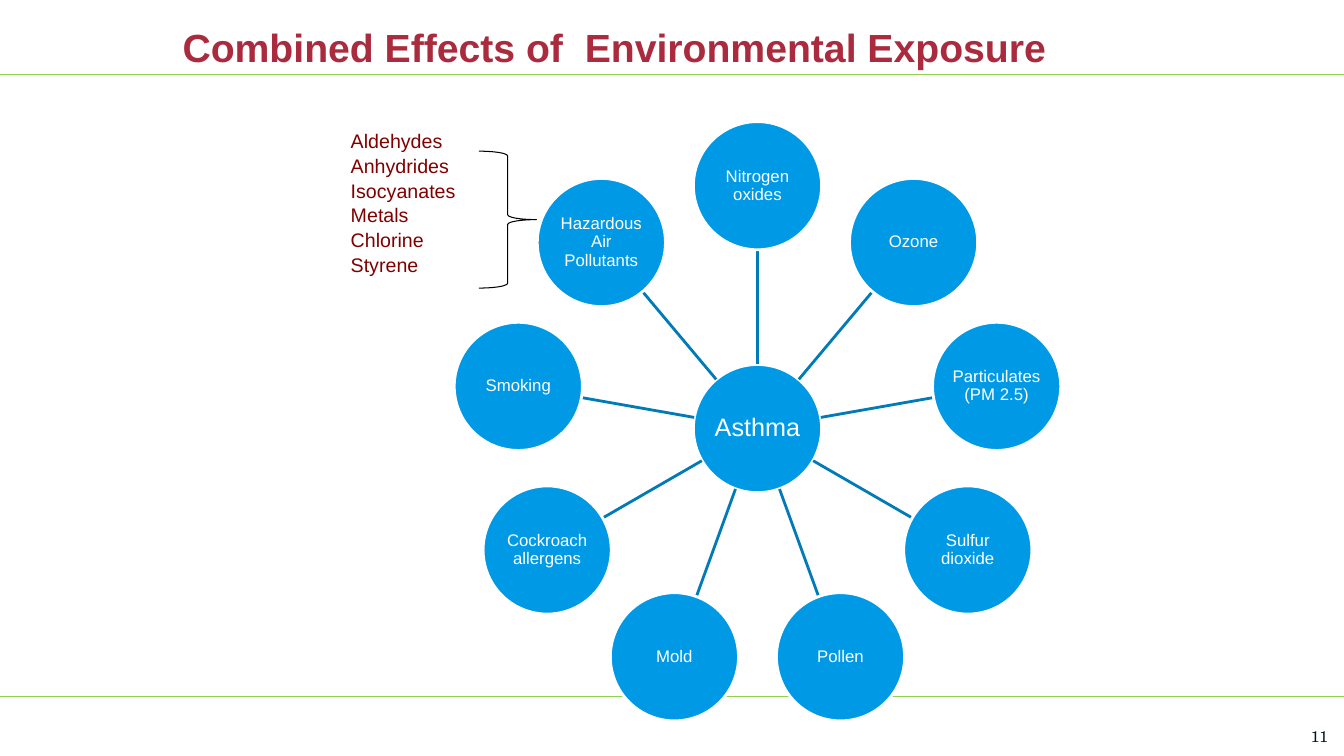
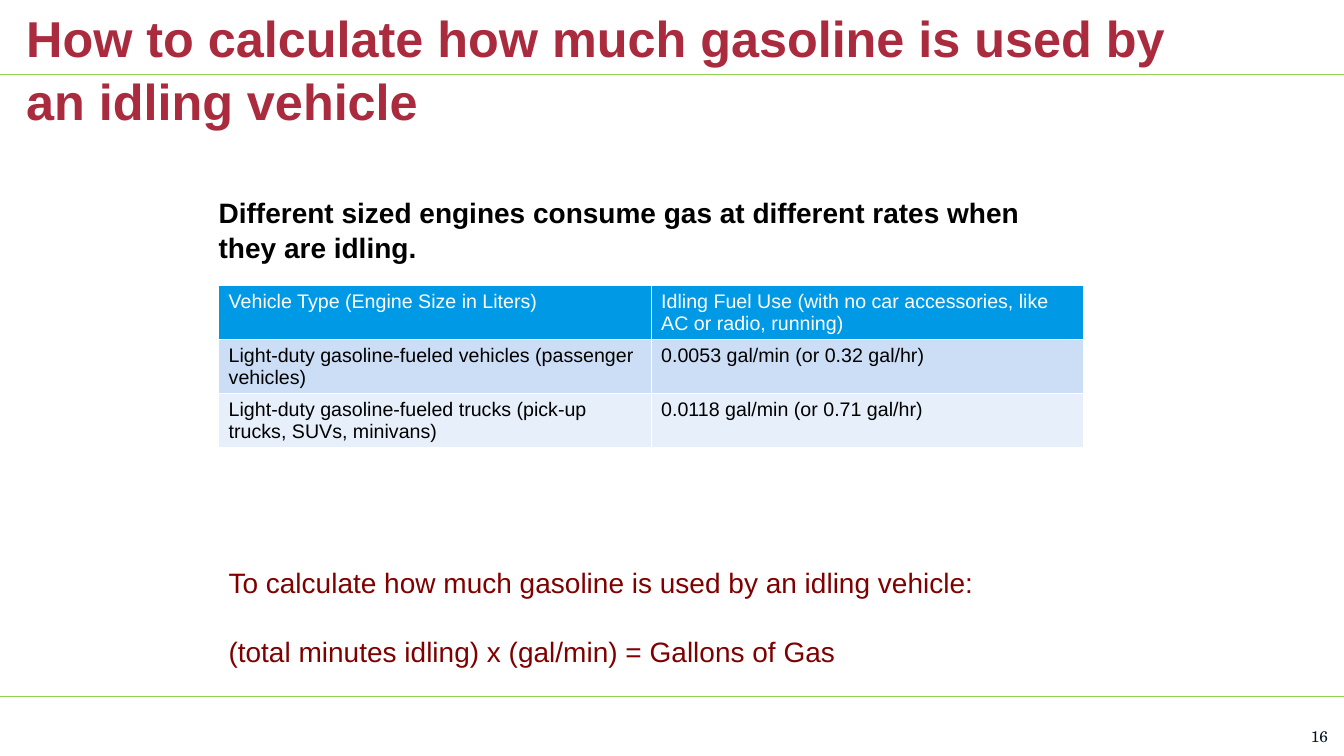
"""Build two slides on asthma exposures and the fuel used by idling vehicles."""
from math import cos, radians, sin

from pptx import Presentation
from pptx.dml.color import RGBColor
from pptx.enum.shapes import MSO_CONNECTOR, MSO_SHAPE
from pptx.enum.text import MSO_ANCHOR, MSO_AUTO_SIZE, PP_ALIGN
from pptx.oxml.ns import qn
from pptx.util import Cm, Pt
from lxml.etree import SubElement

WHITE = RGBColor(0xFF, 0xFF, 0xFF)
BLACK = RGBColor(0, 0, 0)
INK = RGBColor(0x06, 0x13, 0x23)
CRIMSON = RGBColor(0xAA, 0x2B, 0x3E)
MAROON = RGBColor(0x80, 0, 0)
GREEN = RGBColor(0x92, 0xD0, 0x50)
BLUE = RGBColor(0, 0x99, 0xE6)
SPOKE_BLUE = RGBColor(0, 0x7B, 0xB8)
ROW_FILLS = [BLUE, RGBColor(0xCC, 0xDE, 0xF5), RGBColor(0xE7, 0xEF, 0xFA)]

SLIDE_WIDTH, SLIDE_HEIGHT = 33.87, 19.05
RULE_TOPS = [1.88, 17.55]
LINE_SPACING = 1.05

EXPOSURE = {
    "title": "Combined Effects of  Environmental Exposure",
    "title_box": (4.6, -2.67, 22.86, 4.45),
    "title_size": 28,
    "number": "11",
}
IDLING = {
    "title": "How to calculate how much gasoline is used by an idling vehicle",
    "title_box": (0.66, 0.13, 28.96, 3.17),
    "title_size": 36,
    "number": "16",
}
HUB = "Asthma"
TRIGGERS = [
    "Nitrogen oxides", "Ozone", "Particulates (PM 2.5)", "Sulfur dioxide", "Pollen",
    "Mold", "Cockroach allergens", "Smoking", "Hazardous Air Pollutants",
]
POLLUTANTS = ["Aldehydes", "Anhydrides", "Isocyanates", "Metals", "Chlorine", "Styrene"]
ENGINE_NOTE = "Different sized engines consume gas at different rates when they are idling."
FUEL_ROWS = [
    ("Vehicle Type (Engine Size in Liters)",
     "Idling Fuel Use (with no car accessories, like AC or radio, running)"),
    ("Light-duty gasoline-fueled vehicles (passenger vehicles)",
     "0.0053 gal/min (or 0.32 gal/hr)"),
    ("Light-duty gasoline-fueled trucks (pick-up trucks, SUVs, minivans)",
     "0.0118 gal/min (or 0.71 gal/hr)"),
]
FORMULA = [
    "To calculate how much gasoline is used by an idling vehicle:",
    "(total minutes idling) x (gal/min) = Gallons of Gas",
]

HUB_X, HUB_Y = 19.09, 10.8
WHEEL_RADIUS = 6.12
CIRCLE_SIZE = 3.23
SPOKE_START, SPOKE_END = 1.62, 4.52


def place(shape, box):
    for name, value in zip(("left", "top", "width", "height"), box):
        setattr(shape, name, Cm(value))


def set_frame(frame, margins=(0, 0, 0, 0), anchor=MSO_ANCHOR.TOP, wrap=True):
    frame.auto_size = MSO_AUTO_SIZE.NONE
    frame.word_wrap = wrap
    frame.vertical_anchor = anchor
    for side, margin in zip(("left", "top", "right", "bottom"), margins):
        setattr(frame, f"margin_{side}", Cm(margin))


def write(frame, lines, size, color, bold=False, name="Arial",
          align=PP_ALIGN.LEFT, spacing=LINE_SPACING, gap=0):
    font_format = {"size": Pt(size), "bold": bold, "name": name}
    for index, line in enumerate(lines):
        paragraph = frame.add_paragraph() if index else frame.paragraphs[0]
        paragraph.text = line
        paragraph_format = {"alignment": align, "line_spacing": spacing,
                            "space_before": Pt(gap if index else 0), "space_after": Pt(0)}
        for key, value in paragraph_format.items():
            setattr(paragraph, key, value)
        for key, value in font_format.items():
            setattr(paragraph.font, key, value)
        paragraph.font.color.rgb = color


def add_text(slide, box, lines, size, color, **text_format):
    shape = slide.shapes.add_textbox(*map(Cm, box))
    set_frame(shape.text_frame, (0.25, 0.13, 0.25, 0.13))
    write(shape.text_frame, lines, size, color, **text_format)


def add_line(slide, start, end, color, width):
    line = slide.shapes.add_connector(MSO_CONNECTOR.STRAIGHT, *map(Cm, start + end))
    line.line.color.rgb = color
    line.line.width = Pt(width)
    SubElement(line._element.spPr, qn("a:effectLst"))
    return line


def add_master_rules(presentation, slide):
    for index, top in enumerate(RULE_TOPS):
        rule = add_line(slide, (0, top), (SLIDE_WIDTH, top), GREEN, 1)
        rule._element.nvCxnSpPr.cNvPr.id = 100 + index
        presentation.slide_master.shapes._spTree.append(rule._element)


def add_slide(presentation, layout_index, content):
    slide = presentation.slides.add_slide(presentation.slide_layouts[layout_index])
    title = slide.shapes.title
    place(title, content["title_box"])
    set_frame(title.text_frame, anchor=MSO_ANCHOR.BOTTOM)
    write(title.text_frame, [content["title"]], content["title_size"], CRIMSON, bold=True)
    number = slide.shapes.add_textbox(Cm(32.47), Cm(18.31), Cm(1), Cm(0.48))
    set_frame(number.text_frame, anchor=MSO_ANCHOR.BOTTOM, wrap=False)
    write(number.text_frame, [content["number"]], 11, INK, name="TeX Gyre Schola",
          align=PP_ALIGN.RIGHT, spacing=1.0)
    return slide


def add_circle(slide, center, label, size):
    left, top = (value - CIRCLE_SIZE / 2 for value in center)
    circle = slide.shapes.add_shape(MSO_SHAPE.OVAL, Cm(left), Cm(top),
                                    Cm(CIRCLE_SIZE), Cm(CIRCLE_SIZE))
    circle.shadow.inherit = False
    circle.fill.solid()
    circle.fill.fore_color.rgb = BLUE
    circle.line.color.rgb = WHITE
    circle.line.width = Pt(2)
    set_frame(circle.text_frame, anchor=MSO_ANCHOR.MIDDLE)
    write(circle.text_frame, [label], size, WHITE, align=PP_ALIGN.CENTER, spacing=0.9)


def add_wheel(slide):
    add_circle(slide, (HUB_X, HUB_Y), HUB, 18)
    for index, trigger in enumerate(TRIGGERS):
        angle = radians(360 * index / len(TRIGGERS) - 90)
        start, end, center = (
            (HUB_X + distance * cos(angle), HUB_Y + distance * sin(angle))
            for distance in (SPOKE_START, SPOKE_END, WHEEL_RADIUS))
        add_line(slide, start, end, SPOKE_BLUE, 2)
        add_circle(slide, center, trigger, 12)


def add_brace(slide):
    brace = slide.shapes.add_shape(MSO_SHAPE.RIGHT_BRACE, Cm(12.07), Cm(3.81),
                                   Cm(1.45), Cm(3.45))
    brace.shadow.inherit = False
    brace.fill.background()
    brace.line.color.rgb = BLACK
    brace.line.width = Pt(0.75)


def add_borders(cell):
    properties = cell._tc.get_or_add_tcPr()
    for tag in ("a:lnL", "a:lnR", "a:lnT", "a:lnB"):
        border = SubElement(properties, qn(tag), w=str(Pt(1)))
        fill = SubElement(border, qn("a:solidFill"))
        SubElement(fill, qn("a:srgbClr"), val=str(WHITE))


def add_fuel_table(slide):
    row_height = 1.36
    table = slide.shapes.add_table(len(FUEL_ROWS), 2, Cm(5.51), Cm(7.19), Cm(21.8),
                                   Cm(row_height * len(FUEL_ROWS))).table
    for row_index, (texts, fill) in enumerate(zip(FUEL_ROWS, ROW_FILLS)):
        for column_index, text in enumerate(texts):
            cell = table.cell(row_index, column_index)
            add_borders(cell)
            cell.fill.solid()
            cell.fill.fore_color.rgb = fill
            write(cell.text_frame, [text], 14, BLACK if row_index else WHITE, spacing=1.0)


def add_engine_note(slide):
    body = slide.placeholders[1]
    place(body, (5.51, 4.6, 20.52, 9.09))
    set_frame(body.text_frame, (0, 0.28, 0, 0.28))
    properties = body.text_frame.paragraphs[0]._p.get_or_add_pPr()
    properties.set("marL", "0")
    properties.set("indent", "0")
    SubElement(properties, qn("a:buNone"))
    write(body.text_frame, [ENGINE_NOTE], 20, BLACK, bold=True)


def main():
    presentation = Presentation()
    presentation.slide_width = Cm(SLIDE_WIDTH)
    presentation.slide_height = Cm(SLIDE_HEIGHT)

    exposure = add_slide(presentation, 5, EXPOSURE)
    add_master_rules(presentation, exposure)
    add_wheel(exposure)
    add_brace(exposure)
    add_text(exposure, (8.59, 3.1, 4.11, 3.84), POLLUTANTS, 14, MAROON)

    idling = add_slide(presentation, 1, IDLING)
    add_engine_note(idling)
    add_fuel_table(idling)
    add_text(idling, (5.51, 14.07, 21.79, 2.82), FORMULA, 20, MAROON, gap=24)

    presentation.save("out.pptx")


if __name__ == "__main__":
    main()
